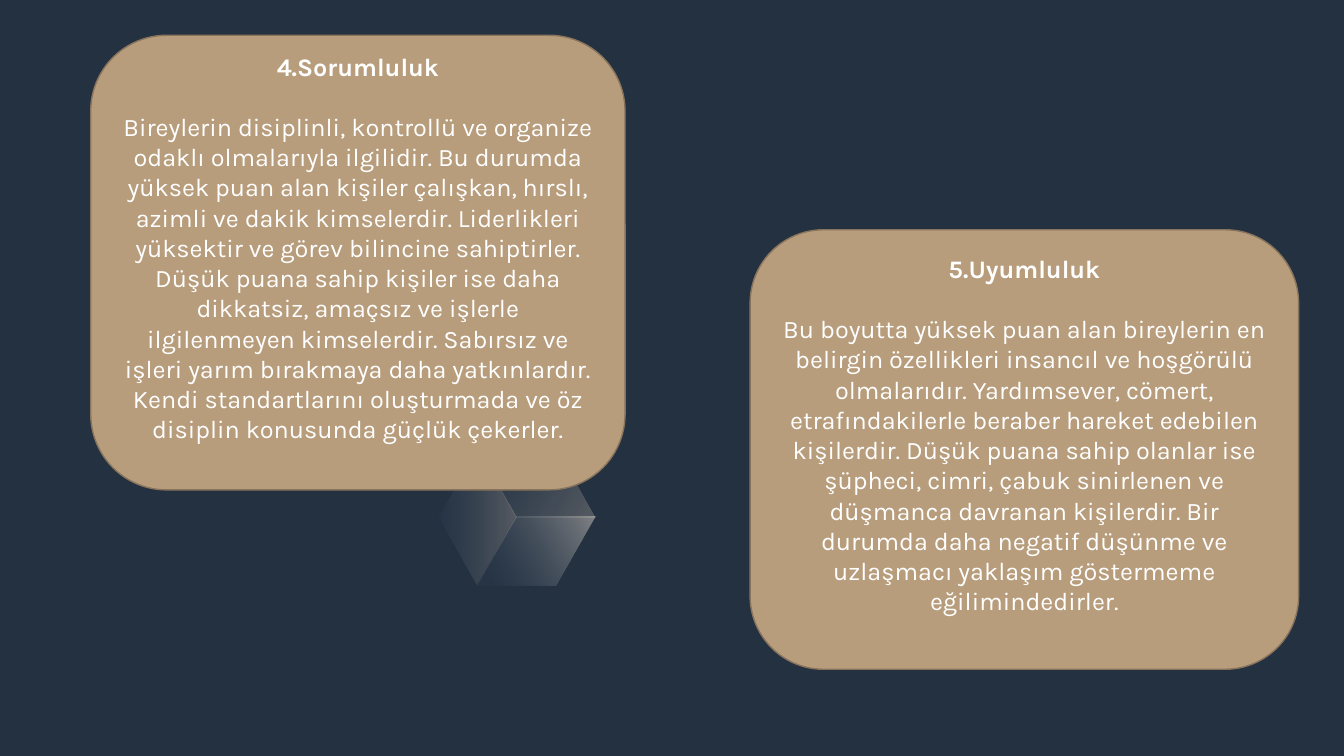
import math

from lxml import etree
from pptx import Presentation
from pptx import util as u
from pptx.dml.color import RGBColor
from pptx.enum import shapes, text
from pptx.oxml.ns import qn

COLORS = {
    "night": "243141",
    "sand": "B89D7C",
    "sand_edge": "88745C",
    "white": "FFFFFF",
    "slate": "33455B",
    "beige": "D4C4B0",
    "cream": "E3D8CB",
}
LINE_HEIGHT = u.Pt(21.6)
CUBE_TILT = 30

RESPONSIBILITY = (
    "Bireylerin disiplinli, kontrollü ve organize odaklı olmalarıyla ilgilidir. "
    "Bu durumda yüksek puan alan kişiler çalışkan, hırslı, azimli ve dakik "
    "kimselerdir. Liderlikleri yüksektir ve görev bilincine sahiptirler. Düşük "
    "puana sahip kişiler ise daha dikkatsiz, amaçsız ve işlerle ilgilenmeyen "
    "kimselerdir. Sabırsız ve işleri yarım bırakmaya daha yatkınlardır. Kendi "
    "standartlarını oluşturmada ve öz disiplin konusunda güçlük çekerler."
)
AGREEABLENESS = (
    "Bu boyutta yüksek puan alan bireylerin en belirgin özellikleri insancıl ve "
    "hoşgörülü olmalarıdır. Yardımsever, cömert, etrafındakilerle beraber hareket "
    "edebilen kişilerdir. Düşük puana sahip olanlar ise şüpheci, cimri, çabuk "
    "sinirlenen ve düşmanca davranan kişilerdir. Bir durumda daha negatif düşünme "
    "ve uzlaşmacı yaklaşım göstermeme eğilimindedirler."
)


def rgb(name):
    return RGBColor.from_string(COLORS[name])


def turn(point, degrees):
    """Turn a point clockwise about the slide's top left corner."""
    x, y = point
    cos, sin = math.cos(math.radians(degrees)), math.sin(math.radians(degrees))
    return x * cos - y * sin, x * sin + y * cos


def add_backdrop(slide, width, height):
    backdrop = slide.shapes.add_shape(shapes.MSO_SHAPE.RECTANGLE, 0, 0, width, height)
    backdrop.shadow.inherit = False
    backdrop.fill.solid()
    backdrop.fill.fore_color.rgb = rgb("night")
    backdrop.line.fill.background()


def add_cube_face(cube, corners, angle, glow, glow_opacity):
    """Draw one tilted face that fades from slate to the glow colour."""
    # Upright outline, placed so that the tilt brings its corners into place
    upright = [turn(corner, -CUBE_TILT) for corner in corners]
    middle = [(min(axis) + max(axis)) / 2 for axis in zip(*upright)]
    centre = turn(middle, CUBE_TILT)
    points = [(u.Inches(x - middle[0] + centre[0]), u.Inches(y - middle[1] + centre[1]))
              for x, y in upright]
    builder = cube.shapes.build_freeform(*points[0], scale=1.0)
    builder.add_line_segments(points[1:], close=True)
    face = builder.convert_to_shape()
    face.rotation = CUBE_TILT
    face.shadow.inherit = False
    face.line.fill.background()

    face.fill.gradient()
    face.fill.gradient_angle = angle
    fade = [(0.2, "slate", 20), (1, glow, glow_opacity)]
    for stop, (position, color, opacity) in zip(face.fill.gradient_stops, fade):
        stop.position = position
        stop.color.rgb = rgb(color)
    # Opacity of each gradient stop
    swatches = face.fill._xPr.iter(qn("a:srgbClr"))
    for swatch, (position, color, opacity) in zip(swatches, fade):
        etree.SubElement(swatch, qn("a:alpha")).set("val", str(opacity * 1000))


def add_cube(slide):
    """Three faces that meet at the centre."""
    cube = slide.shapes.add_group_shape()
    centre, right = (5.12, 5.13), (5.91, 5.13)
    top_left, top_right = (4.74, 4.45), (5.52, 4.44)
    left, bottom_left, bottom_right = (4.35, 5.13), (4.73, 5.81), (5.52, 5.81)
    add_cube_face(cube, [top_right, top_left, centre, right], 0, "beige", 40)
    add_cube_face(cube, [bottom_left, left, top_left, centre], 30, "beige", 40)
    add_cube_face(cube, [right, bottom_right, bottom_left, centre], 60, "cream", 60)


def add_trait_card(slide, left, top, width, height, heading, description):
    card = slide.shapes.add_shape(
        shapes.MSO_SHAPE.FLOWCHART_ALTERNATE_PROCESS,
        u.Inches(left), u.Inches(top), u.Inches(width), u.Inches(height))
    card.shadow.inherit = False
    card.fill.solid()
    card.fill.fore_color.rgb = rgb("sand")
    card.line.color.rgb = rgb("sand_edge")
    card.line.width = u.Pt(1)

    frame = card.text_frame
    frame.word_wrap = True
    frame.vertical_anchor = text.MSO_ANCHOR.MIDDLE
    frame.margin_bottom = u.Inches(0.35)  # one free line below the text
    title, body = frame.paragraphs[0], frame.add_paragraph()
    title.space_after = LINE_HEIGHT
    for paragraph, wording in ((title, heading), (body, description)):
        paragraph.text = wording
        paragraph.alignment = text.PP_ALIGN.CENTER
        paragraph.font.name = "Karla"
        paragraph.font.size = u.Pt(18)
        paragraph.font.bold = paragraph is title
        paragraph.font.color.rgb = rgb("white")


def main():
    deck = Presentation()
    deck.slide_width, deck.slide_height = u.Inches(13.33), u.Inches(7.5)
    slide = deck.slides.add_slide(deck.slide_layouts[6])
    slide.background.fill.solid()
    slide.background.fill.fore_color.rgb = rgb("night")

    # Backdrop and cube
    add_backdrop(slide, deck.slide_width, deck.slide_height)
    add_cube(slide)

    # Trait cards
    add_trait_card(slide, 0.9, 0.35, 5.3, 4.51, "4.Sorumluluk", RESPONSIBILITY)
    add_trait_card(slide, 7.44, 2.28, 5.44, 4.36, "5.Uyumluluk", AGREEABLENESS)

    deck.save("out.pptx")


if __name__ == "__main__":
    main()
